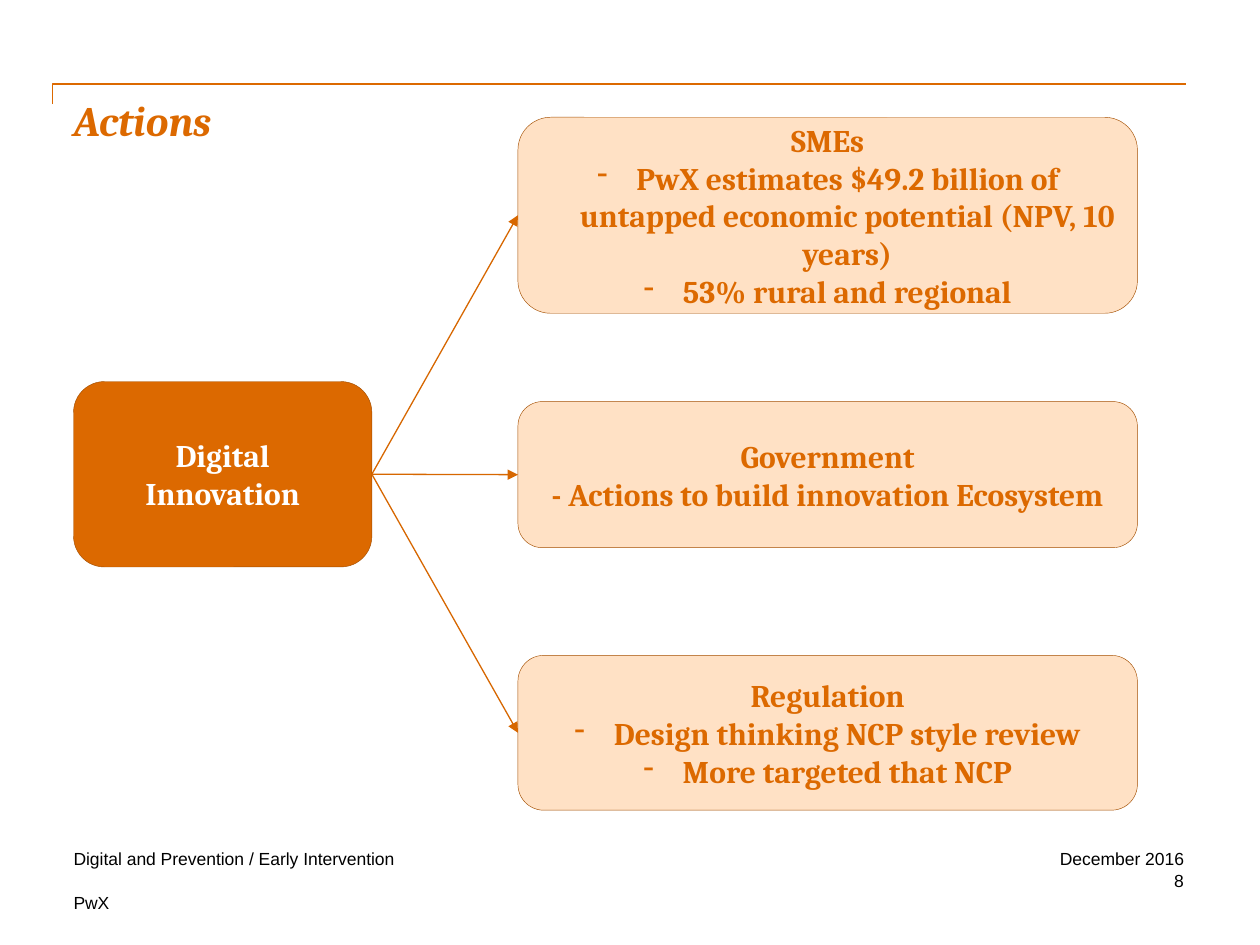
import pptx
import pptx.util
import pptx.dml.color
import pptx.enum.shapes
import pptx.enum.text
import pptx.oxml.ns
import lxml.etree

Pt = pptx.util.Pt
ALIGN = pptx.enum.text.PP_ALIGN
ANCHOR = pptx.enum.text.MSO_ANCHOR
SHAPE = pptx.enum.shapes.MSO_SHAPE
qn = pptx.oxml.ns.qn

COLORS = {
    "orange": "DC6900",
    "arrow": "D76700",
    "edge": "A34E00",
    "peach": "FFE1C5",
    "white": "FFFFFF",
    "black": "000000",
}
TITLE = {"name": "Cambria", "size": Pt(24), "bold": True, "italic": True}
BOX = {"name": "Cambria", "size": Pt(18), "bold": True}
FOOTER = {"name": "Arial", "size": Pt(10)}
NO_MARGINS = {"margin_left": 0, "margin_top": 0, "margin_right": 0, "margin_bottom": 0}

CARDS = [
    ((296, 67, 354, 112), "SMEs", [
        "PwX estimates $49.2 billion of untapped economic potential (NPV, 10 years)",
        "53% rural and regional",
    ], True),
    ((296, 229.5, 354, 83.5), "Government", ["- Actions to build innovation Ecosystem"], False),
    ((296, 374.5, 354, 88.5), "Regulation", [
        "Design thinking NCP style review",
        "More targeted that NCP",
    ], True),
]
FOOTERS = [
    ((42, 484.5, 414, 12), "Digital and Prevention / Early Intervention", ALIGN.LEFT),
    ((556, 484.5, 120.5, 12), "December 2016", ALIGN.RIGHT),
    ((556, 497, 120.5, 12), "8", ALIGN.RIGHT),
    ((42, 510, 204, 12), "PwX", ALIGN.LEFT),
]


def rgb(color):
    return pptx.dml.color.RGBColor.from_string(COLORS[color])


def set_all(obj, values):
    for key, value in values.items():
        setattr(obj, key, value)


def set_line(sp, color, width):
    sp.line.color.rgb = rgb(color)
    sp.line.width = Pt(width)


def add_run(p, text, style, color, align):
    p.alignment = align
    r = p.add_run()
    r.text = text
    set_all(r.font, style)
    r.font.color.rgb = rgb(color)


def add_dash(p):
    pPr = p._p.get_or_add_pPr()
    pPr.set("marL", str(Pt(22.5)))
    pPr.set("indent", str(-Pt(22.5)))
    lxml.etree.SubElement(pPr, qn("a:buFontTx"))
    lxml.etree.SubElement(pPr, qn("a:buChar"), char="-")


def add_title(s, box, text):
    sp = s.shapes.title
    set_all(sp, dict(zip(("left", "top", "width", "height"), map(Pt, box))))
    tf = sp.text_frame
    set_all(tf, {**NO_MARGINS, "word_wrap": True, "vertical_anchor": ANCHOR.TOP,
                 "auto_size": pptx.enum.text.MSO_AUTO_SIZE.NONE})
    add_run(tf.paragraphs[0], text, TITLE, "orange", ALIGN.LEFT)


def add_header_rule(s, box):
    x, y, w, h = box
    builder = s.shapes.build_freeform(Pt(x), Pt(y + h))
    builder.add_line_segments([(Pt(x), Pt(y)), (Pt(x + w), Pt(y))], close=False)
    sp = builder.convert_to_shape()
    sp.shadow.inherit = False
    sp.fill.background()
    set_line(sp, "orange", 1)


def add_box(s, box, fill, color, heading, items=(), dashed=False):
    sp = s.shapes.add_shape(SHAPE.ROUNDED_RECTANGLE, *map(Pt, box))
    sp.shadow.inherit = False
    sp.fill.solid()
    sp.fill.fore_color.rgb = rgb(fill)
    set_line(sp, "edge", 0.25)
    tf = sp.text_frame
    set_all(tf, {"word_wrap": True, "vertical_anchor": ANCHOR.MIDDLE})
    add_run(tf.paragraphs[0], heading, BOX, color, ALIGN.CENTER)
    for item in items:
        p = tf.add_paragraph()
        add_run(p, item, BOX, color, ALIGN.CENTER)
        if dashed:
            add_dash(p)
    return sp


def add_arrow(s, source, target):
    sp = s.shapes.add_connector(pptx.enum.shapes.MSO_CONNECTOR.STRAIGHT, 0, 0, 0, 0)
    sp.begin_connect(source, 3)
    sp.end_connect(target, 1)
    set_line(sp, "arrow", 0.75)
    lxml.etree.SubElement(sp.line._get_or_add_ln(), qn("a:tailEnd"), type="triangle")
    lxml.etree.SubElement(sp._element.spPr, qn("a:effectLst"))


def add_diagram(s, hub_box):
    hub = add_box(s, hub_box, "orange", "white", "Digital Innovation")
    for box, heading, items, dashed in CARDS:
        card = add_box(s, box, "peach", "orange", heading, items, dashed)
        add_arrow(s, hub, card)


def add_footer(s, box, text, align):
    tf = s.shapes.add_textbox(*map(Pt, box)).text_frame
    set_all(tf, {**NO_MARGINS, "word_wrap": True})
    add_run(tf.paragraphs[0], text, FOOTER, "black", align)


def main():
    prs = pptx.Presentation()
    prs.slide_width, prs.slide_height = Pt(720), Pt(540)
    s = prs.slides.add_slide(prs.slide_layouts[5])
    add_header_rule(s, (30, 48, 648, 11.5))
    add_title(s, (42, 54, 636, 72), "Actions")
    add_diagram(s, (42, 218, 170.5, 106))
    for box, text, align in FOOTERS:
        add_footer(s, box, text, align)
    prs.save("out.pptx")


if __name__ == "__main__":
    main()
